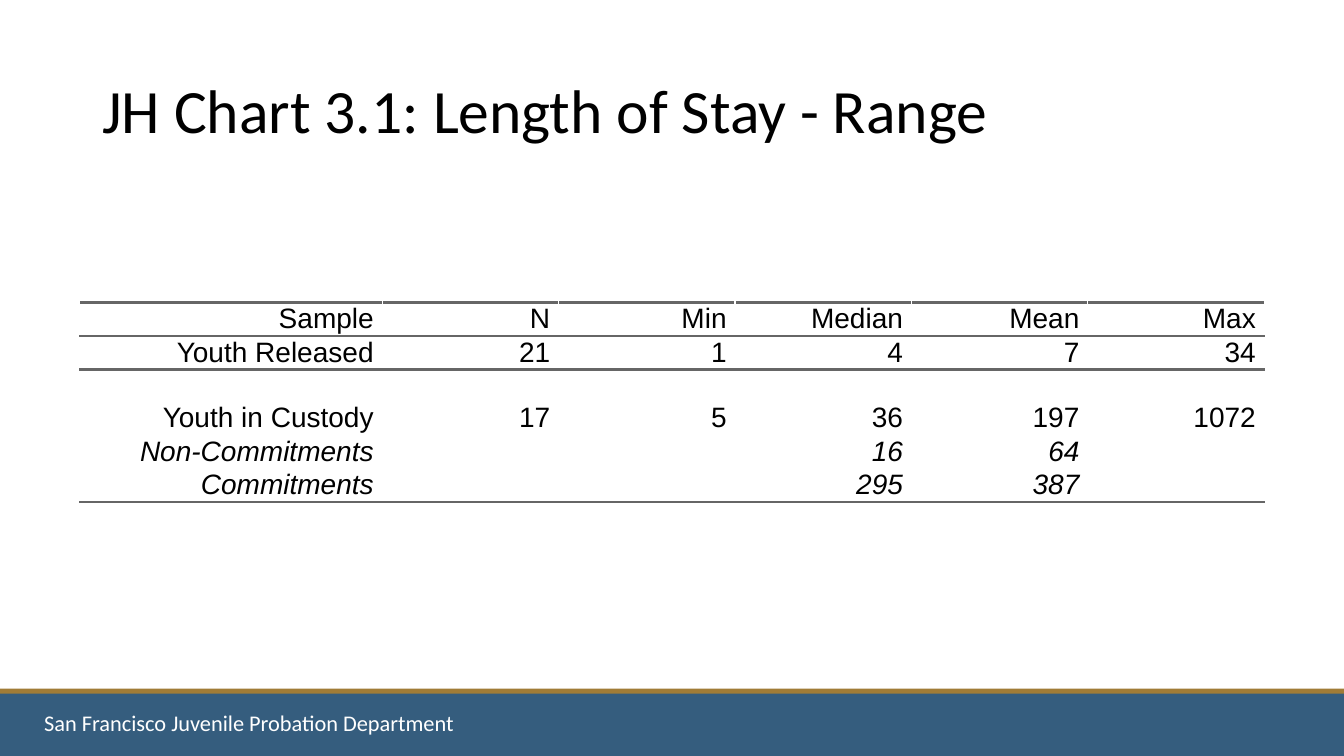
from lxml import etree
from pptx import Presentation
from pptx.dml.color import RGBColor
from pptx.enum.shapes import MSO_SHAPE
from pptx.enum.text import MSO_ANCHOR, PP_ALIGN
from pptx.oxml.ns import qn
from pptx.util import Pt

RECTANGLE = MSO_SHAPE.RECTANGLE
MIDDLE = MSO_ANCHOR.MIDDLE
TOP = MSO_ANCHOR.TOP
RIGHT = PP_ALIGN.RIGHT

BLACK = RGBColor(0x00, 0x00, 0x00)
WHITE = RGBColor(0xFF, 0xFF, 0xFF)
GOLD = RGBColor(0xA1, 0x7C, 0x36)
BLUE = RGBColor(0x35, 0x5D, 0x7E)
GRAY = RGBColor(0x66, 0x66, 0x66)

COLUMN_WIDTHS = [216] + [126] * 5
ROW_HEIGHT = 22.4
STAY_ROWS = [
    ["Sample", "N", "Min", "Median", "Mean", "Max"],
    ["Youth Released", "21", "1", "4", "7", "34"],
    [""] * 6,
    ["Youth in Custody", "17", "5", "36", "197", "1072"],
    ["Non-Commitments", "", "", "16", "64", ""],
    ["Commitments", "", "", "295", "387", ""],
]
ITALIC_ROWS = (4, 5)
RULES = {0: ("a:lnT", "a:lnB"), 1: ("a:lnT",), 5: ("a:lnB",)}


def add_run(paragraph, text, size, font, color, italic=False):
    """Add one formatted run to a paragraph."""
    run = paragraph.add_run()
    run.text = text
    run.font.size = Pt(size)
    run.font.name = font
    run.font.color.rgb = color
    run.font.italic = italic


def add_band(slide, top, height, color):
    """Add a full-width footer band."""
    shape = slide.shapes.add_shape(RECTANGLE, 0, Pt(top), Pt(960), Pt(height))
    shape.shadow.inherit = False
    shape.fill.solid()
    shape.fill.fore_color.rgb = color
    shape.line.fill.background()


def add_text(slide, box, text, size, color, anchor, line_spacing=1.0):
    """Add a one-line text box."""
    shape = slide.shapes.add_textbox(*map(Pt, box))
    frame = shape.text_frame
    frame.word_wrap = True
    frame.vertical_anchor = anchor
    paragraph = frame.paragraphs[0]
    paragraph.line_spacing = line_spacing
    add_run(paragraph, text, size, "Calibri", color)


def add_rule(cell, edge):
    """Draw a gray line on one edge of a table cell."""
    properties = cell._tc.get_or_add_tcPr()
    line = etree.SubElement(properties, qn(edge), w=str(Pt(2)))
    fill = etree.SubElement(line, qn("a:solidFill"))
    etree.SubElement(fill, qn("a:srgbClr"), val=str(GRAY))


def fill_cell(cell, text, italic, edges):
    """Format one table cell and write its text."""
    cell.margin_left = cell.margin_top = cell.margin_bottom = 0
    cell.margin_right = Pt(6)
    cell.vertical_anchor = MIDDLE
    for edge in edges:
        add_rule(cell, edge)
    cell.fill.background()
    if text:
        paragraph = cell.text_frame.paragraphs[0]
        paragraph.alignment = RIGHT
        add_run(paragraph, text, 20, "Arial", BLACK, italic)


def add_stay_table(slide, left, top):
    """Add the length of stay table."""
    row_count = len(STAY_ROWS)
    frame = slide.shapes.add_table(
        row_count, len(COLUMN_WIDTHS), Pt(left), Pt(top),
        Pt(sum(COLUMN_WIDTHS)), Pt(ROW_HEIGHT * row_count))
    table = frame.table
    table.horz_banding = False
    table.first_row = False
    for column, width in zip(table.columns, COLUMN_WIDTHS):
        column.width = Pt(width)
    for index, values in enumerate(STAY_ROWS):
        table.rows[index].height = Pt(ROW_HEIGHT)
        for cell, text in zip(table.rows[index].cells, values):
            fill_cell(cell, text, index in ITALIC_ROWS, RULES.get(index, ()))


def main():
    """Build and save the slide."""
    presentation = Presentation()
    presentation.slide_width = Pt(960)
    presentation.slide_height = Pt(540)
    slide = presentation.slides.add_slide(presentation.slide_layouts[6])
    add_band(slide, 491.8, 8.6, GOLD)
    add_band(slide, 495.4, 44.6, BLUE)
    add_text(slide, (24.5, 503.3, 801.4, 26.6),
             "San Francisco Juvenile Probation Department", 16, WHITE, TOP)
    add_text(slide, (66, 28.8, 828, 104.4),
             "JH Chart 3.1: Length of Stay - Range", 44, BLACK, MIDDLE, 0.9)
    add_stay_table(slide, 57, 216)
    presentation.save("out.pptx")


if __name__ == "__main__":
    main()
